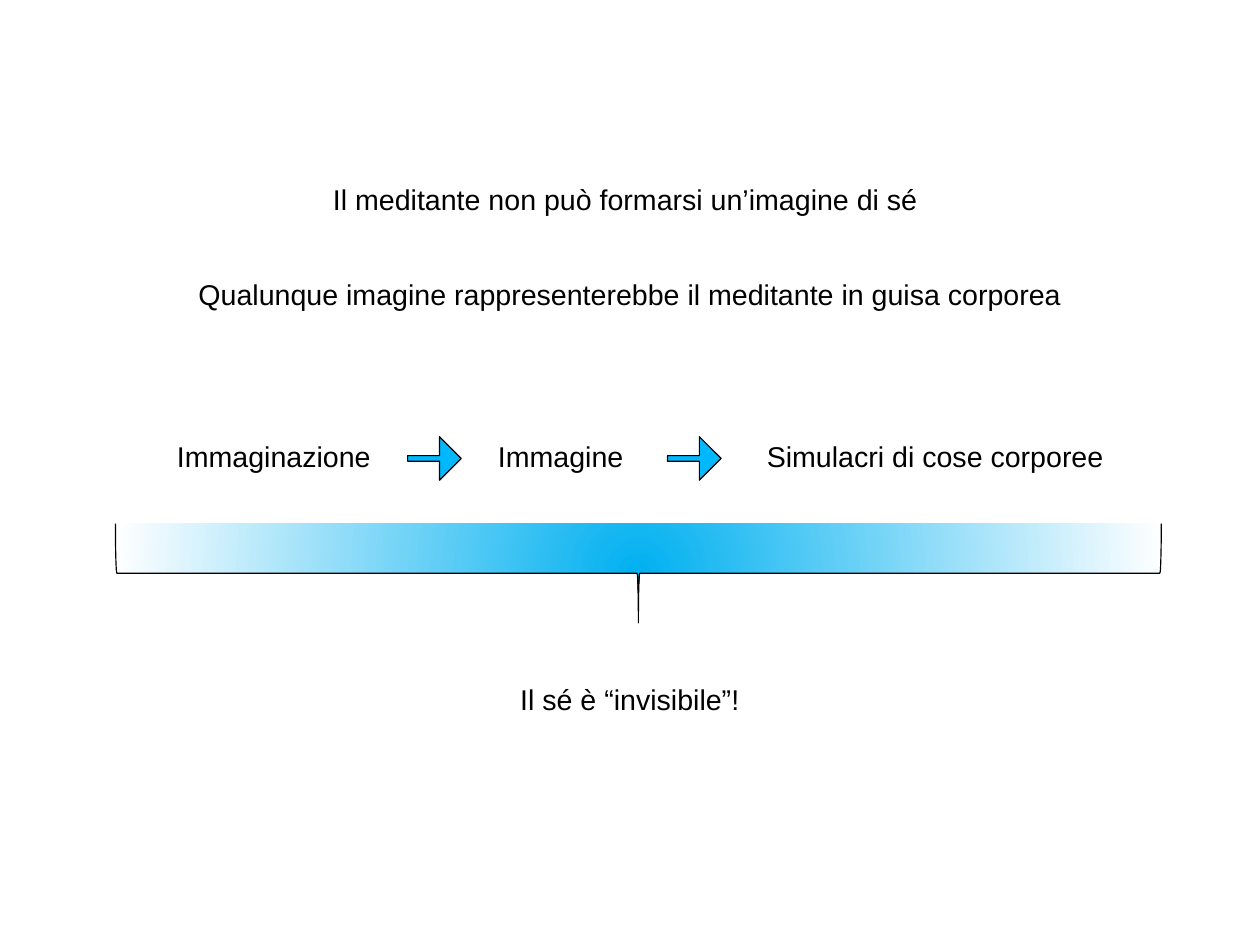
"""Builds the slide on the invisibility of the self."""
from dataclasses import dataclass

from lxml.etree import SubElement
from pptx import Presentation
from pptx.dml.color import RGBColor
from pptx.enum.shapes import MSO_SHAPE as Preset
from pptx.enum.text import MSO_ANCHOR as Anchor, MSO_AUTO_SIZE as AutoSize, PP_ALIGN as Align
from pptx.oxml.ns import qn
from pptx.shapes.autoshape import Shape
from pptx.slide import Slide
from pptx.util import Pt

BLACK, ARROW_BLUE, BRACE_BLUE, WHITE = "000000", "00B8FF", "00B0F0", "FFFFFF"
LINE_HEIGHT = 27.4
CHAIN_TOP = 275.1
FRAME_FORMAT = {
    "word_wrap": True,
    "auto_size": AutoSize.NONE,
    "vertical_anchor": Anchor.TOP,
    "margin_left": Pt(7.2),
    "margin_right": Pt(7.2),
    "margin_top": Pt(3.6),
    "margin_bottom": Pt(3.6),
}
PARAGRAPH_FORMAT = {"alignment": Align.CENTER, "line_spacing": 0.93,
                    "space_before": Pt(0), "space_after": Pt(0)}
FONT_FORMAT = {"name": "Arial", "size": Pt(18), "bold": False}


@dataclass(frozen=True)
class Statement:
    text: str
    left: float
    top: float
    width: float


THESIS = Statement("Il meditante non può formarsi un’imagine di sé", 200.9, 113, 385.9)
STATEMENTS = (
    Statement("Qualunque imagine rappresenterebbe il meditante in guisa corporea",
              90, 172.8, 613.4),
    Statement("Immaginazione", 103.7, CHAIN_TOP, 137.5),
    Statement("Immagine", 306, CHAIN_TOP, 94.3),
    Statement("Simulacri di cose corporee", 475, CHAIN_TOP, 228.2),
    Statement("Il sé è “invisibile”!", 319.7, 427.7, 154.1),
)
ARROW_LEFTS = (256.8, 420.5)


def color(value: str) -> RGBColor:
    """Turn a hex string into a colour."""
    return RGBColor.from_string(value)


def apply(target: object, values: dict) -> None:
    """Set each format value on the target."""
    for name, value in values.items():
        setattr(target, name, value)


def write(holder: Shape, statement: Statement) -> None:
    """Place a text holder and fill it with a statement."""
    apply(holder, {"left": Pt(statement.left), "top": Pt(statement.top),
                   "width": Pt(statement.width), "height": Pt(LINE_HEIGHT)})
    frame = holder.text_frame
    apply(frame, FRAME_FORMAT)
    paragraph = frame.paragraphs[0]
    apply(paragraph, PARAGRAPH_FORMAT)
    run = paragraph.add_run()
    run.text = statement.text
    apply(run.font, FONT_FORMAT)
    run.font.color.rgb = color(BLACK)


def add_outlined(slide: Slide, preset: Preset, left: float, top: float,
                 width: float, height: float, bend: float) -> Shape:
    """Add a preset shape with a thin black outline."""
    shape = slide.shapes.add_shape(preset, Pt(left), Pt(top), Pt(width), Pt(height))
    shape.shadow.inherit = False
    shape.adjustments[0] = bend
    shape.adjustments[1] = 0.5
    shape.line.color.rgb = color(BLACK)
    shape.line.width = Pt(0.75)
    return shape


def fill_radial(shape: Shape, inner: str, outer: str) -> None:
    """Fill a shape with a circular gradient from its centre."""
    shape.fill.gradient()
    for stop, position, value in zip(shape.fill.gradient_stops, (0, 1), (inner, outer)):
        stop.position = position
        stop.color.rgb = color(value)
    gradient = shape.element.spPr.find(qn("a:gradFill"))
    gradient.remove(gradient.find(qn("a:lin")))
    circle = SubElement(gradient, qn("a:path"), {"path": "circle"})
    SubElement(circle, qn("a:fillToRect"), dict.fromkeys("ltrb", "50000"))


def main() -> None:
    """Build and save the slide."""
    deck = Presentation()
    deck.slide_width, deck.slide_height = Pt(793.7), Pt(595.3)
    slide = deck.slides.add_slide(deck.slide_layouts[5])

    write(slide.shapes.title, THESIS)
    for statement in STATEMENTS:
        write(slide.shapes.add_textbox(0, 0, 0, 0), statement)

    for left in ARROW_LEFTS:
        arrow = add_outlined(slide, Preset.RIGHT_ARROW, left, CHAIN_TOP, 33.8, LINE_HEIGHT, 0.129)
        arrow.fill.solid()
        arrow.fill.fore_color.rgb = color(ARROW_BLUE)

    brace = add_outlined(slide, Preset.RIGHT_BRACE, 370.8, 31.7, 62.6, 658.8, 0.014)
    brace.rotation = 90
    fill_radial(brace, BRACE_BLUE, WHITE)

    deck.save("out.pptx")


if __name__ == "__main__":
    main()
